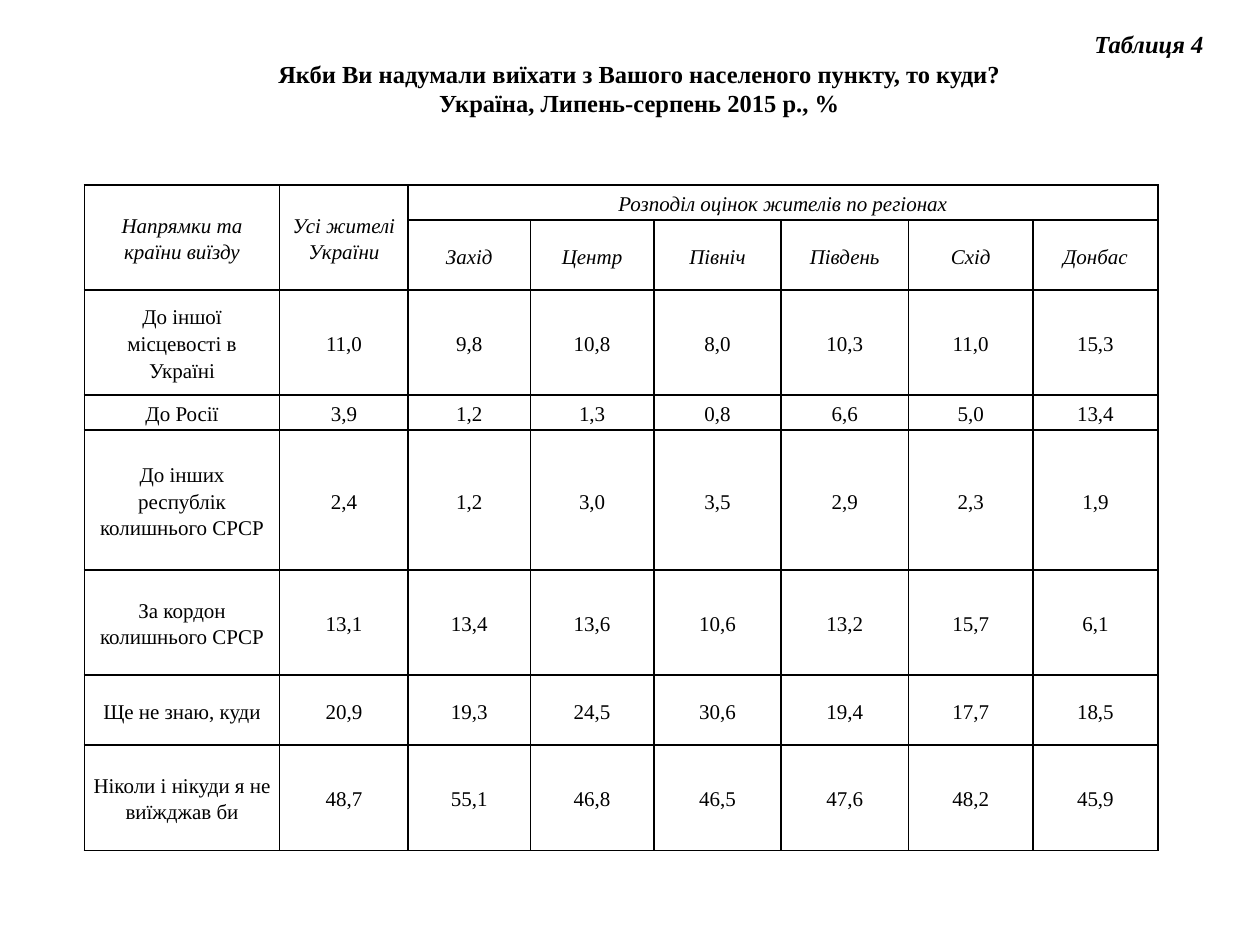
from lxml.etree import SubElement
from pptx import Presentation
from pptx.dml.color import RGBColor
from pptx.enum.text import MSO_ANCHOR, PP_ALIGN
from pptx.oxml.ns import qn
from pptx.util import Inches, Pt

COLORS = {"ink": "000000"}
FONT = "Times New Roman"
SLIDE_WIDTH, SLIDE_HEIGHT = Inches(10), Inches(7.5)

HEADING_BOX = (0.02, 0.023, 0.945, 0.139)
TABLE_BOX = (0.067, 0.196, 0.852, 0.704)
COLUMN_WEIGHTS = [1.55, 1.02, 0.97, 0.98, 1.01, 1.01, 0.99, 0.99]
ROW_UNITS = [1, 2, 3, 1, 4, 3, 2, 3]
HEADER_ROWS = 2

HEADING = [
    ("Таблиця 4", PP_ALIGN.RIGHT, True),
    ("Якби Ви надумали виїхати з Вашого населеного пункту, то куди?", PP_ALIGN.CENTER, False),
    ("Україна, Липень-серпень 2015 р., %", PP_ALIGN.CENTER, False),
]
DESTINATIONS = [
    ["Напрямки та країни виїзду", "Усі жителі України", "Розподіл оцінок жителів по регіонах"],
    ["", "", "Захід", "Центр", "Північ", "Південь", "Схід", "Донбас"],
    ["До іншої місцевості в Україні", "11,0", "9,8", "10,8", "8,0", "10,3", "11,0", "15,3"],
    ["До Росії", "3,9", "1,2", "1,3", "0,8", "6,6", "5,0", "13,4"],
    ["До інших республік колишнього СРСР", "2,4", "1,2", "3,0", "3,5", "2,9", "2,3", "1,9"],
    ["За кордон колишнього СРСР", "13,1", "13,4", "13,6", "10,6", "13,2", "15,7", "6,1"],
    ["Ще не знаю, куди", "20,9", "19,3", "24,5", "30,6", "19,4", "17,7", "18,5"],
    ["Ніколи і нікуди я не виїжджав би", "48,7", "55,1", "46,8", "46,5", "47,6", "48,2", "45,9"],
]


def to_lengths(box):
    left, top, width, height = box
    return (int(left * SLIDE_WIDTH), int(top * SLIDE_HEIGHT),
            int(width * SLIDE_WIDTH), int(height * SLIDE_HEIGHT))


def format_paragraph(paragraph, size, alignment, bold=False, italic=False):
    paragraph.alignment = alignment
    for run in paragraph.runs:
        run.font.name = FONT
        run.font.size = Pt(size)
        run.font.bold = bold
        run.font.italic = italic
        run.font.color.rgb = RGBColor.from_string(COLORS["ink"])


def add_heading(slide, box):
    text_frame = slide.shapes.add_textbox(*to_lengths(box)).text_frame
    text_frame.word_wrap = True
    text_frame.vertical_anchor = MSO_ANCHOR.TOP
    text_frame.margin_top = Inches(0.06)
    text_frame.text = "\n".join(text for text, _, _ in HEADING)
    for paragraph, (_, alignment, italic) in zip(text_frame.paragraphs, HEADING):
        format_paragraph(paragraph, 14, alignment, bold=True, italic=italic)
        paragraph._p.get_or_add_pPr().set("indent", str(Inches(0.3)))


def add_borders(cell):
    properties = cell._tc.get_or_add_tcPr()
    for position, side in enumerate(("lnL", "lnR", "lnT", "lnB")):
        line = SubElement(properties, qn(f"a:{side}"), w=str(Pt(1)))
        fill = SubElement(line, qn("a:solidFill"))
        SubElement(fill, qn("a:srgbClr"), val=COLORS["ink"])
        properties.insert(position, line)


def format_cell(cell, italic):
    cell.fill.background()
    add_borders(cell)
    cell.vertical_anchor = MSO_ANCHOR.MIDDLE
    cell.margin_left = cell.margin_right = Inches(0.07)
    cell.margin_top = cell.margin_bottom = 0
    paragraph = cell.text_frame.paragraphs[0]
    paragraph.line_spacing = 1.15
    format_paragraph(paragraph, 12, PP_ALIGN.CENTER, italic=italic)


def add_destination_table(slide, box):
    left, top, width, height = to_lengths(box)
    table = slide.shapes.add_table(
        len(ROW_UNITS), len(COLUMN_WEIGHTS), left, top, width, height).table
    table.first_row = False
    table.horz_banding = False
    for column, weight in zip(table.columns, COLUMN_WEIGHTS):
        column.width = int(width * weight / sum(COLUMN_WEIGHTS))
    for row, units in zip(table.rows, ROW_UNITS):
        row.height = int(height * units / sum(ROW_UNITS))
    for row_index, texts in enumerate(DESTINATIONS):
        for column_index, text in enumerate(texts):
            table.cell(row_index, column_index).text = text
    for row_index, row in enumerate(table.rows):
        for cell in row.cells:
            format_cell(cell, italic=row_index < HEADER_ROWS)
    for column_index in range(2):
        table.cell(0, column_index).merge(table.cell(1, column_index))
    table.cell(0, 2).merge(table.cell(0, len(COLUMN_WEIGHTS) - 1))


def main():
    presentation = Presentation()
    presentation.slide_width = SLIDE_WIDTH
    presentation.slide_height = SLIDE_HEIGHT
    slide = presentation.slides.add_slide(presentation.slide_layouts[6])
    add_destination_table(slide, TABLE_BOX)
    add_heading(slide, HEADING_BOX)
    presentation.save("out.pptx")


if __name__ == "__main__":
    main()
